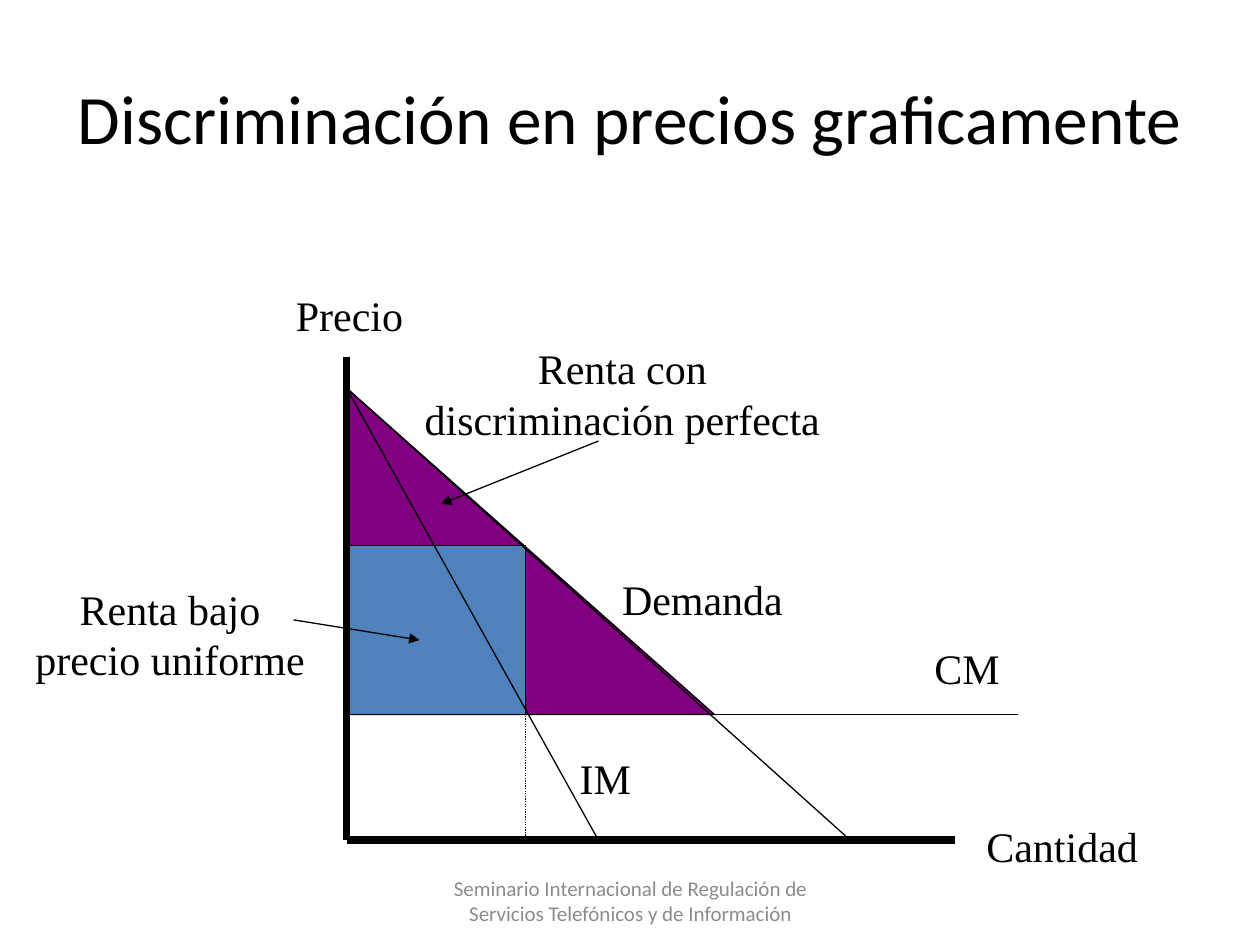
from dataclasses import dataclass

from lxml.etree import SubElement
from pptx import Presentation
from pptx.dml.color import RGBColor
from pptx.enum.dml import MSO_LINE
from pptx.enum.shapes import MSO_CONNECTOR, MSO_SHAPE
from pptx.enum.text import MSO_ANCHOR, MSO_AUTO_SIZE, PP_ALIGN
from pptx.oxml.ns import qn
from pptx.util import Inches, Pt


@dataclass(frozen=True)
class Theme:
    ink: RGBColor = RGBColor(0x00, 0x00, 0x00)
    muted: RGBColor = RGBColor(0x8C, 0x8C, 0x8C)
    surplus: RGBColor = RGBColor(0x80, 0x00, 0x80)
    uniform: RGBColor = RGBColor(0x4F, 0x81, 0xBD)
    heading_font: str = "Calibri"
    label_font: str = "Times New Roman"
    title_size: float = 39.6
    label_size: float = 24
    footer_size: float = 12
    thin: float = 0.75
    thick: float = 4.5


class Diagram:
    def __init__(self, slide, theme):
        self.slide = slide
        self.theme = theme

    def area(self, preset, left, top, right, bottom, color):
        area = self.slide.shapes.add_shape(
            preset, Inches(left), Inches(top), Inches(right - left), Inches(bottom - top))
        area.shadow.inherit = False
        area.fill.solid()
        area.fill.fore_color.rgb = color
        area.line.color.rgb = self.theme.ink
        area.line.width = Pt(self.theme.thin)

    def line(self, start, end, width=None, dash=None, arrow=False):
        line = self.slide.shapes.add_connector(
            MSO_CONNECTOR.STRAIGHT, *(Inches(value) for value in (*start, *end)))
        line.line.color.rgb = self.theme.ink
        line.line.width = Pt(width or self.theme.thin)
        if dash:
            line.line.dash_style = dash
        if arrow:
            SubElement(line.line._get_or_add_ln(), qn("a:tailEnd"), type="triangle")
        SubElement(line._element.spPr, qn("a:effectLst"))

    def text(self, box, lines, font, size, color, align=PP_ALIGN.CENTER):
        frame = self.slide.shapes.add_textbox(*(Inches(value) for value in box)).text_frame
        frame.word_wrap = True
        frame.vertical_anchor = MSO_ANCHOR.MIDDLE
        frame.text = "\n".join(lines)
        for paragraph in frame.paragraphs:
            paragraph.alignment = align
            paragraph.font.name = font
            paragraph.font.size = Pt(size)
            paragraph.font.color.rgb = color
        return frame

    def label(self, box, *lines, align=PP_ALIGN.CENTER):
        frame = self.text(box, lines, self.theme.label_font, self.theme.label_size,
                          self.theme.ink, align)
        frame.word_wrap = False
        frame.auto_size = MSO_AUTO_SIZE.SHAPE_TO_FIT_TEXT
        frame.vertical_anchor = MSO_ANCHOR.TOP


def main():
    presentation = Presentation()
    presentation.slide_width, presentation.slide_height = Inches(10), Inches(7.5)
    theme = Theme()
    diagram = Diagram(presentation.slides.add_slide(presentation.slide_layouts[6]), theme)

    # Key positions of the graph
    axis_x, axis_y = 2.75, 6.67
    choke_price, uniform_price, marginal_cost = 3.08, 4.33, 5.67
    uniform_quantity = 4.17
    origin = (axis_x, axis_y)
    choke_point = (axis_x, choke_price)
    uniform_point = (uniform_quantity, uniform_price)

    # Rent areas
    diagram.area(MSO_SHAPE.RIGHT_TRIANGLE, axis_x, choke_price, 5.67, marginal_cost,
                 theme.surplus)
    diagram.area(MSO_SHAPE.RECTANGLE, axis_x, uniform_price, uniform_quantity, marginal_cost,
                 theme.uniform)

    # Title
    diagram.text((0.5, 0.3, 9, 1.25), ["Discriminación en precios graficamente"],
                 theme.heading_font, theme.title_size, theme.ink)

    # Axes
    diagram.line((axis_x, 2.83), origin, theme.thick)
    diagram.line(origin, (7.58, axis_y), theme.thick)
    diagram.label((2.25, 2.25, 1.06, 0.5), "Precio", align=PP_ALIGN.LEFT)
    diagram.label((7.73, 6.46, 1.42, 0.5), "Cantidad", align=PP_ALIGN.LEFT)

    # Demand, marginal revenue and marginal cost
    diagram.line(choke_point, (6.75, axis_y))
    diagram.line(choke_point, (4.75, axis_y))
    diagram.line((axis_x, marginal_cost), (8.08, marginal_cost))
    diagram.label((4.83, 4.5, 1.49, 0.5), "Demanda")
    diagram.label((4.5, 5.92, 0.61, 0.5), "IM")
    diagram.label((7.31, 5.05, 0.73, 0.5), "CM")

    # Guides to the uniform price and quantity
    for guide_end in ((uniform_quantity, axis_y), (axis_x, uniform_price)):
        diagram.line(uniform_point, guide_end, dash=MSO_LINE.ROUND_DOT)

    # Callouts
    diagram.label((0.17, 4.58, 2.36, 0.91), "Renta bajo", "precio uniforme")
    diagram.line((2.33, 4.92), (3.33, 5.08), arrow=True)
    diagram.label((3.26, 2.67, 3.36, 0.91), "Renta con", "discriminación perfecta")
    diagram.line((4.75, 3.5), (3.5, 4), arrow=True)

    # Footer
    diagram.text(
        (3.42, 6.95, 3.17, 0.4),
        ["Seminario Internacional de Regulación de Servicios Telefónicos y de Información"],
        theme.heading_font, theme.footer_size, theme.muted)

    presentation.save("out.pptx")


if __name__ == "__main__":
    main()
